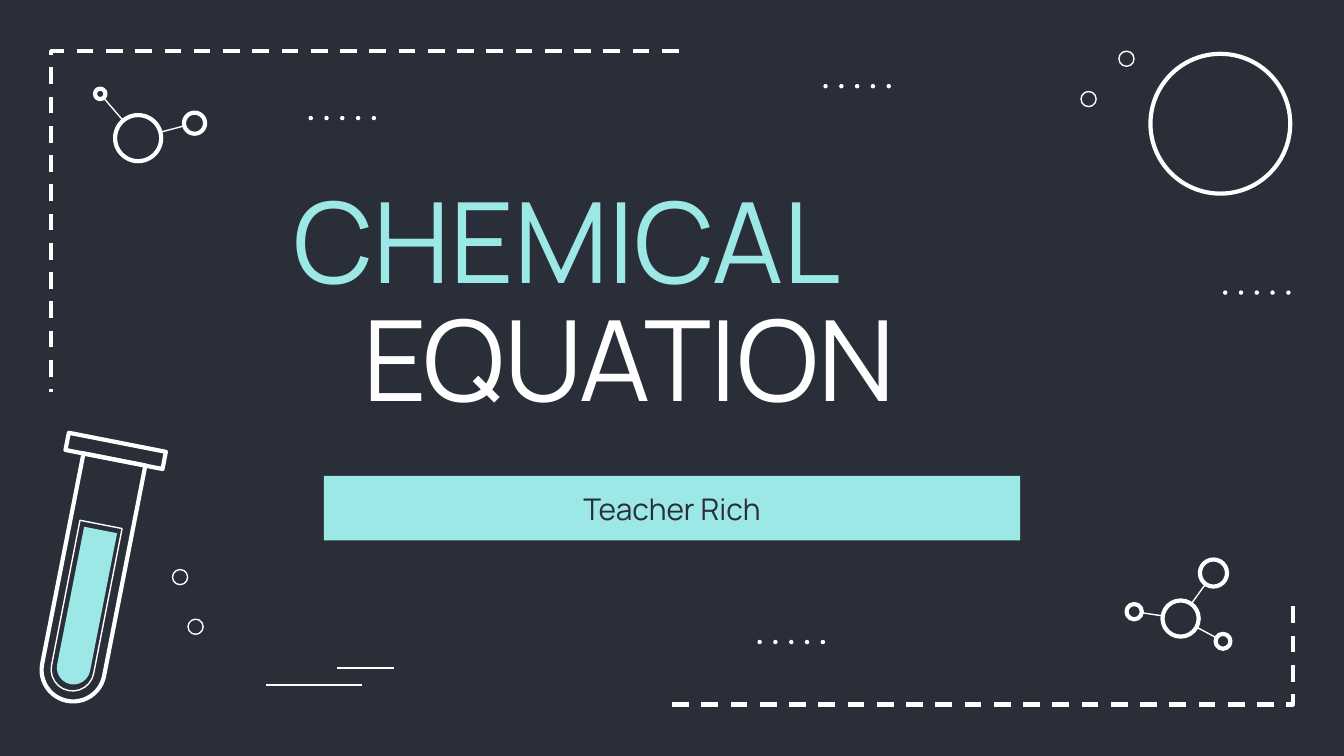
from math import hypot

from lxml import etree
from pptx import Presentation
from pptx.dml.color import RGBColor
from pptx.enum.dml import MSO_LINE
from pptx.enum.shapes import MSO_CONNECTOR, MSO_SHAPE
from pptx.enum.text import MSO_ANCHOR, MSO_AUTO_SIZE, PP_ALIGN
from pptx.oxml.ns import qn
from pptx.util import Pt

OVAL, RECT = MSO_SHAPE.OVAL, MSO_SHAPE.RECTANGLE
ROUND_ENDED = MSO_SHAPE.ROUND_2_SAME_RECTANGLE
STRAIGHT = MSO_CONNECTOR.STRAIGHT
DASH = MSO_LINE.DASH
CENTER, MIDDLE = PP_ALIGN.CENTER, MSO_ANCHOR.MIDDLE
NO_FIT = MSO_AUTO_SIZE.NONE

COLORS = {"night": "2A2E38", "mint": "9CE8E7", "chalk": "FFFFFF"}
FONT = "Manrope"
THICK, THIN = 2.25, 0.75
TILT = 11.1
DOT, DOT_PITCH, DOT_COUNT = 1.6, 8.46, 5
BUBBLE = 8.1


def rgb(name):
    """Return the named colour."""
    return RGBColor.from_string(COLORS[name])


def paint(part, fill=None, weight=None):
    """Set fill and outline, and drop the shadow."""
    part.shadow.inherit = False
    if fill:
        part.fill.solid()
        part.fill.fore_color.rgb = rgb(fill)
    else:
        part.fill.background()
    if weight:
        part.line.color.rgb = rgb("chalk")
        part.line.width = Pt(weight)
    else:
        part.line.fill.background()


def circle(slide, x, y, diameter, weight, fill=None):
    """Draw a circle around its centre."""
    corner = Pt(x - diameter / 2), Pt(y - diameter / 2)
    ring = slide.shapes.add_shape(OVAL, *corner, Pt(diameter), Pt(diameter))
    paint(ring, fill, weight)


def thin_line(slide, x1, y1, x2, y2):
    """Draw a thin straight line."""
    stroke = slide.shapes.add_connector(STRAIGHT, Pt(x1), Pt(y1), Pt(x2), Pt(y2))
    stroke.line.color.rgb = rgb("chalk")
    stroke.line.width = Pt(THIN)
    etree.SubElement(stroke._element.spPr, qn("a:effectLst"))


def dashed_corner(slide, start, corner, end):
    """Draw a dashed L that turns at the corner."""
    outline = slide.shapes.build_freeform(Pt(start[0]), Pt(start[1]))
    outline.add_line_segments([(Pt(x), Pt(y)) for x, y in (corner, end)], close=False)
    bracket = outline.convert_to_shape()
    paint(bracket, weight=THICK)
    bracket.line.dash_style = DASH


def dot_row(slide, x, y):
    """Draw a row of dots starting at the first dot's centre."""
    for step in range(DOT_COUNT):
        circle(slide, x + step * DOT_PITCH, y, DOT, THIN, "chalk")


def molecule(slide, left, top, atoms):
    """Draw atoms in a box and bond each to the first one."""
    placed = [(left + x, top + y, size) for x, y, size in atoms]
    for atom in placed:
        circle(slide, *atom, THICK)
    hub_x, hub_y, hub_size = placed[0]
    for x, y, size in placed[1:]:
        dx, dy = x - hub_x, y - hub_y
        length = hypot(dx, dy)
        near, far = hub_size / 2 / length, 1 - size / 2 / length
        thin_line(slide, hub_x + dx * near, hub_y + dy * near,
                  hub_x + dx * far, hub_y + dy * far)


def test_tube(slide, left, top):
    """Draw the tilted tube with its liquid and lid."""
    parts = [
        (ROUND_ENDED, 0, 8, 33.8, 131.8, None, THICK),
        (ROUND_ENDED, 5.1, 46.2, 18, 84.2, "mint", None),
        (ROUND_ENDED, 2.2, 43.2, 23, 90.7, None, THIN),
        (RECT, 3.8, 0, 53, 9.4, None, THICK),
    ]
    for kind, x, y, width, height, fill, weight in parts:
        part = slide.shapes.add_shape(kind, Pt(left + x), Pt(top + y), Pt(width), Pt(height))
        paint(part, fill, weight)
        part.rotation = TILT
        if kind == ROUND_ENDED:
            part.rotation = TILT + 180
            part.adjustments[0] = 0.5


def fill_placeholder(holder, box, lines, size):
    """Place a placeholder and write its centred, coloured lines."""
    holder.left, holder.top, holder.width, holder.height = (Pt(v) for v in box)
    frame = holder.text_frame
    frame.text = "\n".join(text for text, _ in lines)
    layout = {"word_wrap": True, "auto_size": NO_FIT, "vertical_anchor": MIDDLE}
    for name, value in layout.items():
        setattr(frame, name, value)
    for side in ("left", "top", "right", "bottom"):
        setattr(frame, f"margin_{side}", Pt(7.2))
    for paragraph, (_, color) in zip(frame.paragraphs, lines):
        for name, value in {"alignment": CENTER, "space_before": Pt(0)}.items():
            setattr(paragraph, name, value)
        font = paragraph.runs[0].font
        for name, value in {"name": FONT, "size": Pt(size), "bold": False}.items():
            setattr(font, name, value)
        font.color.rgb = rgb(color)
    return frame


def heading(slide, box, stagger):
    """Write the two-line title, the second line pushed right."""
    lines = [("CHEMICAL", "mint"), ("EQUATION", "chalk")]
    frame = fill_placeholder(slide.shapes.title, box, lines, 60)
    frame.margin_right = Pt(7.2 + stagger)
    for paragraph in frame.paragraphs:
        paragraph.line_spacing = 0.88
    frame.paragraphs[1]._p.get_or_add_pPr().set("marL", str(Pt(stagger)))


def teacher_band(slide, box):
    """Write the teacher's name on a mint band."""
    band = slide.placeholders[1]
    fill_placeholder(band, box, [("Teacher Rich", "night")], 16)
    band.fill.solid()
    band.fill.fore_color.rgb = rgb("mint")


def cover(slide):
    """Compose the cover slide."""
    slide.background.fill.solid()
    slide.background.fill.fore_color.rgb = rgb("night")
    dashed_corner(slide, (363.6, 27.4), (27.4, 27.4), (27.4, 210.2))
    dashed_corner(slide, (360, 377.4), (692.6, 377.4), (692.6, 319))
    thin_line(slide, 142.6, 367, 193.7, 367)
    thin_line(slide, 180.7, 357.8, 211, 357.8)
    for x, y in [(656.4, 156.8), (442.3, 46.2), (407, 344), (166.5, 63.3)]:
        dot_row(slide, x, y)
    test_tube(slide, 31.7, 236.9)
    for x, y in [(603.5, 31.5), (583.2, 53.1), (96.5, 309.2), (104.8, 335.8)]:
        circle(slide, x, y, BUBBLE, THIN)
    circle(slide, 653.8, 66.3, 74.9, THICK)
    molecule(slide, 50, 46, [(24, 28, 24.7), (3.7, 4.3, 5.6), (54.2, 20, 11.3)])
    molecule(slide, 603, 299,
             [(29.5, 32.4, 19.4), (47.1, 8, 14.5), (52.2, 44.6, 8), (4.6, 28.7, 8.2)])
    heading(slide, (50.4, 103.7, 573.1, 121.7), 66)
    teacher_band(slide, (173.5, 254.9, 373, 34.6))


def main():
    """Build and save the deck."""
    deck = Presentation()
    deck.slide_width, deck.slide_height = Pt(720), Pt(405)
    cover(deck.slides.add_slide(deck.slide_layouts[0]))
    deck.save("out.pptx")


if __name__ == "__main__":
    main()
